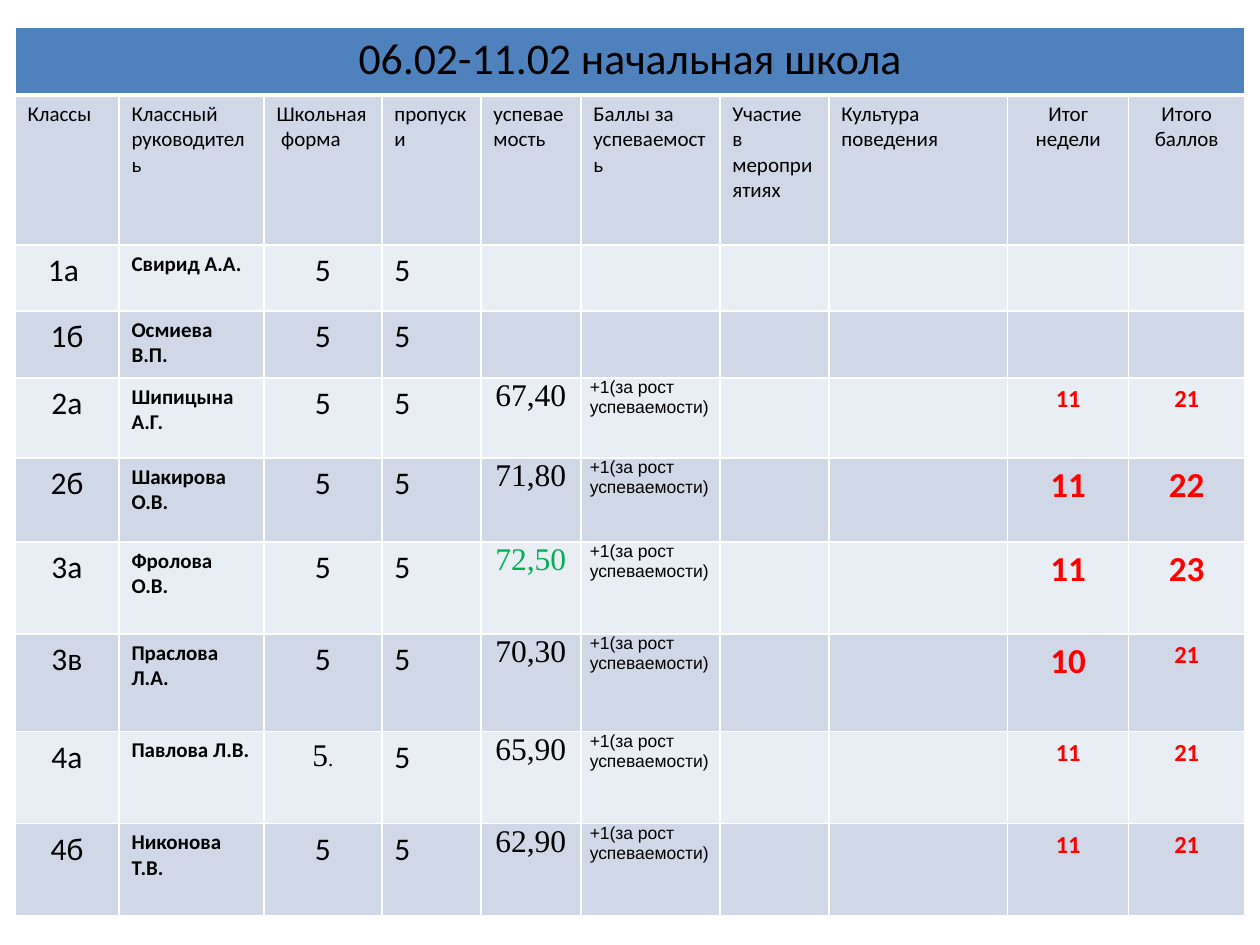
from lxml.etree import SubElement
from pptx import Presentation
from pptx.dml.color import RGBColor
from pptx.enum.text import PP_ALIGN
from pptx.oxml.ns import qn
from pptx.util import Pt

PX = 914400 // 126
COLORS = {"title": "4F81BD", "dark": "D0D8E8", "light": "E9EDF4", "line": "FFFFFF",
          "text": "000000", "total": "FF0000", "best": "00B050"}
COLUMN_WIDTHS = [104, 145, 118, 99, 100, 139, 109, 179, 121, 116]
ROW_HEIGHTS = [68, 150, 66, 67, 80, 84, 92, 98, 92, 92]
TITLE = "06.02-11.02 начальная школа"
HEADERS = ["Классы", "Классный руководитель", "Школьная  форма", "пропуски", "успеваемость",
           "Баллы за успеваемость", "Участие  в мероприятиях", "Культура поведения",
           "Итог недели", "Итого баллов"]
GROWTH = "+1(за рост успеваемости)"
# Class, teacher, uniform, grade average, (week total, size), (overall total, size)
CLASSES = [
    ("1а ", "Свирид А.А.", "5", None, None, None),
    ("1б", "Осмиева В.П.", "5", None, None, None),
    ("2а", "Шипицына А.Г.", "5", "67,40", ("11", 14), ("21", 14)),
    ("2б", "Шакирова О.В.", "5", "71,80", ("11", 20), ("22", 20)),
    ("3а", "Фролова О.В.", "5", "72,50", ("11", 20), ("23", 20)),
    ("3в", "Праслова Л.А.", "5", "70,30", ("10", 20), ("21", 14)),
    ("4а", "Павлова Л.В.", "5.", "65,90", ("11", 14), ("21", 14)),
    ("4б", "Никонова Т.В.", "5", "62,90", ("11", 14), ("21", 14)),
]
BEST_AVERAGE = "72,50"


class SlideBuilder:
    def __init__(self, slide, font="Calibri"):
        self.slide = slide
        self.font = font

    def color(self, name):
        return RGBColor.from_string(COLORS[name])

    def table(self, left, top, widths, heights):
        frame = self.slide.shapes.add_table(len(heights), len(widths), left * PX, top * PX,
                                            sum(widths) * PX, sum(heights) * PX)
        table = frame.table
        table.first_row = table.horz_banding = False
        for column, width in zip(table.columns, widths):
            column.width = width * PX
        for row, height in zip(table.rows, heights):
            row.height = height * PX
        return table

    def cell_style(self, cell, fill, bottom=1):
        cell.fill.solid()
        cell.fill.fore_color.rgb = self.color(fill)
        properties = cell._tc.get_or_add_tcPr()
        sides = {"lnL": 1, "lnR": 1, "lnT": 1, "lnB": bottom}
        for position, (side, points) in enumerate(sides.items()):
            line = SubElement(properties, qn(f"a:{side}"), w=str(Pt(points)))
            solid = SubElement(line, qn("a:solidFill"))
            SubElement(solid, qn("a:srgbClr"), val=COLORS["line"])
            properties.insert(position, line)

    def cell_text(self, cell, text, size, center=False, bold=False, color="text",
                  font=None, margins=None):
        para = cell.text_frame.paragraphs[0]
        para.text = text
        para.alignment = PP_ALIGN.CENTER if center else PP_ALIGN.LEFT
        para.font.size = Pt(size)
        para.font.name = font or self.font
        para.font.bold = bold
        para.font.color.rgb = self.color(color)
        if margins:
            side, top = margins
            cell.margin_left = cell.margin_right = side * PX
            cell.margin_top, cell.margin_bottom = top * PX, 0
        return para


def main():
    deck = Presentation()
    deck.slide_width, deck.slide_height = 1260 * PX, 945 * PX
    builder = SlideBuilder(deck.slides.add_slide(deck.slide_layouts[6]))
    table = builder.table(15, 27, COLUMN_WIDTHS, ROW_HEIGHTS)

    # Fills and borders
    for row in range(len(ROW_HEIGHTS)):
        fill = "title" if row == 0 else "dark" if row % 2 else "light"
        for column in range(len(COLUMN_WIDTHS)):
            builder.cell_style(table.cell(row, column), fill, bottom=1 if row else 3)

    # Title and column headings
    table.cell(0, 0).merge(table.cell(0, len(COLUMN_WIDTHS) - 1))
    builder.cell_text(table.cell(0, 0), TITLE, 25, center=True)
    for column, header in enumerate(HEADERS):
        builder.cell_text(table.cell(1, column), header, 12, center=column >= 8)

    # One row for each class
    for row, (name, teacher, uniform, average, *totals) in enumerate(CLASSES, start=2):
        cells = table.rows[row].cells
        builder.cell_text(cells[0], name, 18, center=True)
        builder.cell_text(cells[1], teacher, 12, bold=True)
        score, dot = uniform[0], uniform[1:]
        para = builder.cell_text(cells[2], score, 18, center=True,
                                 font="Times New Roman" if dot else None)
        if dot:
            span = para.add_run()
            span.text = dot
            span.font.size = Pt(12)
        builder.cell_text(cells[3], "5", 18)
        if average is None:
            continue
        builder.cell_text(cells[4], average, 18, center=True, font="Times New Roman",
                          color="best" if average == BEST_AVERAGE else "text", margins=(1, 1))
        builder.cell_text(cells[5], GROWTH, 10, font="Arial", margins=(9, 0))
        for column, (total, size) in enumerate(totals, start=8):
            builder.cell_text(cells[column], total, size, center=True, bold=True, color="total")

    deck.save("out.pptx")


if __name__ == "__main__":
    main()
